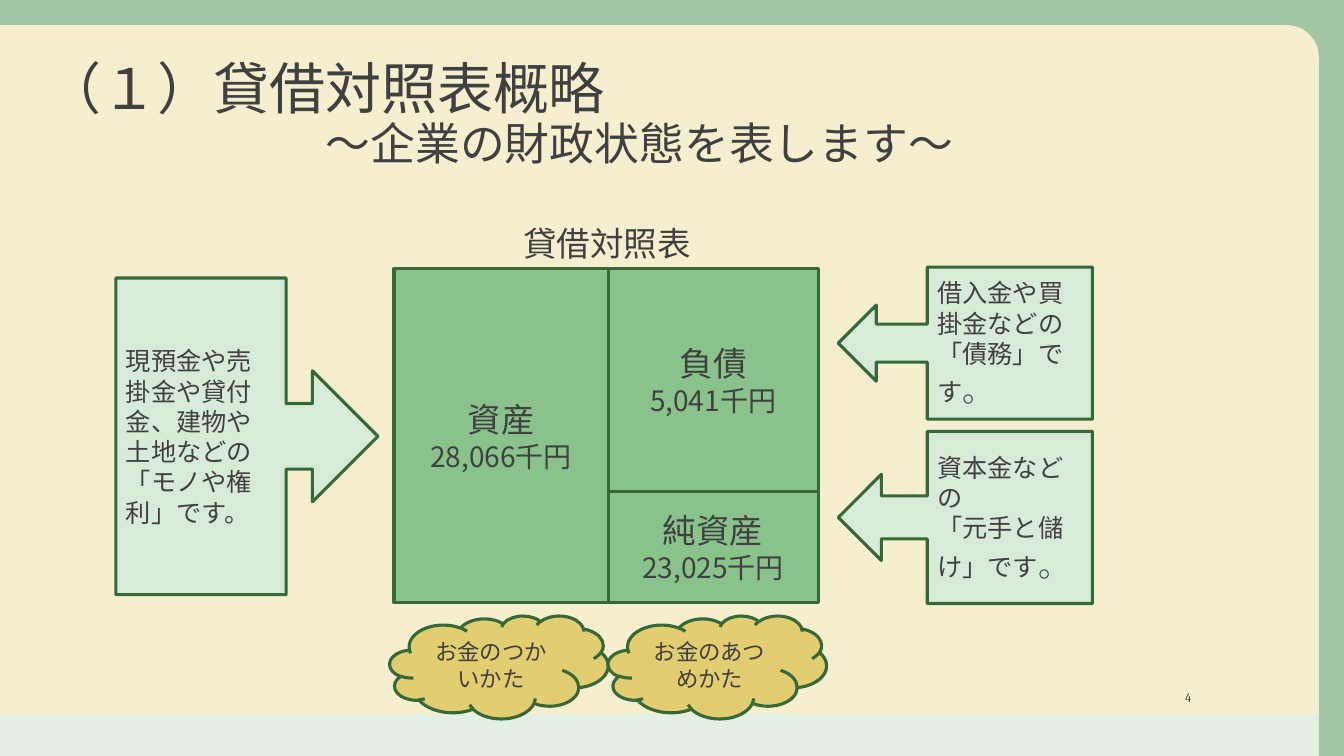
from lxml.etree import SubElement as Sub
from pptx import Presentation
from pptx.dml.color import RGBColor as RGB
from pptx.enum.shapes import MSO_SHAPE as Kind
from pptx.enum.text import MSO_ANCHOR as Anchor, MSO_AUTO_SIZE as Fit, PP_ALIGN as Align
from pptx.oxml.ns import qn
from pptx.util import Inches, Pt

HUE = {
    "text": "404040", "edge": "488E4A", "cream": "F5EECF", "mint": "D8EBD8",
    "green": "89C38B", "line": "356937", "gold": "E2CD71",
}
SANS, SERIF = "Noto Sans CJK JP", "Cambria"
COLS, ROWS = 160, 90


def write(frame, *paras, size=18, align=Align.LEFT, anchor=Anchor.MIDDLE, space=1.0, wrap=True):
    """Each paragraph is a list of runs: (text, size, font), the last two optional."""
    frame.word_wrap, frame.vertical_anchor = wrap, anchor
    for i, runs in enumerate(paras):
        para = frame.paragraphs[0] if i == 0 else frame.add_paragraph()
        para.alignment, para.line_spacing = align, space
        para.space_before = para.space_after = Pt(0)
        for text, *form in runs:
            run = para.add_run()
            run.text = text
            face = form[1] if len(form) > 1 else SANS
            run.font.size = Pt(form[0] if form else size)
            run.font.name = face
            run.font.color.rgb = RGB.from_string(HUE["text"])
            Sub(run.font._element, qn("a:ea")).set("typeface", face)


class Board:
    def __init__(self, deck):
        self.wide, self.high = deck.slide_width, deck.slide_height
        self.slide = deck.slides.add_slide(deck.slide_layouts[5])
        self.shapes = self.slide.shapes

    def place(self, x, y, w, h):
        """Turn grid columns and rows into lengths."""
        col, row = self.wide / COLS, self.high / ROWS
        return [int(n) for n in (x * col, y * row, w * col, h * row)]

    def shape(self, kind, spot, fill, *paras, line=True, **form):
        item = self.shapes.add_shape(kind, *self.place(*spot))
        item.shadow.inherit = False
        item.fill.solid()
        item.fill.fore_color.rgb = RGB.from_string(HUE[fill])
        if line:
            item.line.color.rgb = RGB.from_string(HUE["line"])
            item.line.width = Pt(2.25)
        else:
            item.line.fill.background()
        write(item.text_frame, *paras, **form)
        return item

    def band(self, spot, fill, alpha):
        item = self.shape(Kind.RECTANGLE, spot, fill, line=False)
        tone = item.fill._xPr.find(".//" + qn("a:srgbClr"))
        Sub(tone, qn("a:alpha")).set("val", str(alpha * 1000))

    def title(self, spot, *paras, indent, **form):
        item = self.shapes.title
        item.left, item.top, item.width, item.height = self.place(*spot)
        item.text_frame.auto_size = Fit.NONE
        write(item.text_frame, *paras, **form)
        props = item.text_frame.paragraphs[-1]._p.get_or_add_pPr()
        props.set("marL", str(Inches(indent)))
        props.set("indent", "0")
        self.shapes._spTree.append(item.element)  # bring above the backdrop

    def label(self, spot, text, **form):
        item = self.shapes.add_textbox(*self.place(*spot))
        write(item.text_frame, [text], **form)


def main():
    deck = Presentation()
    deck.slide_width, deck.slide_height = Inches(13.33), Inches(7.5)
    board = Board(deck)

    # Backdrop
    side, foot = 157, 85
    board.band((0, foot, side, ROWS - foot), "mint", 70)
    board.band((side, foot, COLS - side, ROWS - foot), "edge", 50)
    board.band((0, 0, COLS, foot), "edge", 50)
    page = board.shape(Kind.ROUND_1_RECTANGLE, (0, 3, side, foot - 3), "cream", line=False)
    page.adjustments[0] = 0.046

    # Title
    board.title((4.2, 5.3, 126, 15.6), [("（１）貸借対照表概略", 40)],
                [("～企業の財政状態を表します～", 32)],
                indent=2.78, anchor=Anchor.BOTTOM, space=0.9)

    # Balance sheet
    left, mid, right = 46.9, 72.4, 97.4
    top, split, base = 32, 58.5, 71.75
    cells = [
        (left, top, mid, base, "資産", "28,066千円"),
        (mid, top, right, split, "負債", "5,041千円"),
        (mid, split, right, base, "純資産", "23,025千円"),
    ]
    for x, y, x2, y2, name, sum_ in cells:
        board.shape(Kind.RECTANGLE, (x, y, x2 - x, y2 - y), "green",
                    [(name, 24)], [(sum_, 20)], align=Align.CENTER)
    board.label((61.1, 26.5, 22.7, 5.5), ("貸借対照表", 24),
                anchor=Anchor.TOP, space=0.9, wrap=False)

    # Callouts
    stop = ("。", 24, SERIF)
    board.shape(Kind.RIGHT_ARROW_CALLOUT, (13.8, 33.1, 31.2, 37.7), "mint",
                [("現預金や売掛金や貸付金、建物や土地などの",)], [("「モノや権利」です。",)])
    notes = [
        (31.8, 18.1, "借入金や買掛金などの", "「債務」です"),
        (51.35, 20.5, "資本金などの", "「元手と儲け」です"),
    ]
    for y, h, head, tail in notes:
        board.shape(Kind.LEFT_ARROW_CALLOUT, (99.8, y, 30.25, h), "mint",
                    [(head,)], [(tail,), stop])

    # Clouds
    for i, text in enumerate(["お金のつかいかた", "お金のあつめかた"]):
        board.shape(Kind.CLOUD, (46.4 + 26 * i, 73.3, 26, 12.25), "gold",
                    [(text, 16)], align=Align.CENTER)

    # Page number
    board.label((133, 82, 10, 2), ("4", 9, SERIF), align=Align.RIGHT)
    deck.save("out.pptx")


if __name__ == "__main__":
    main()
